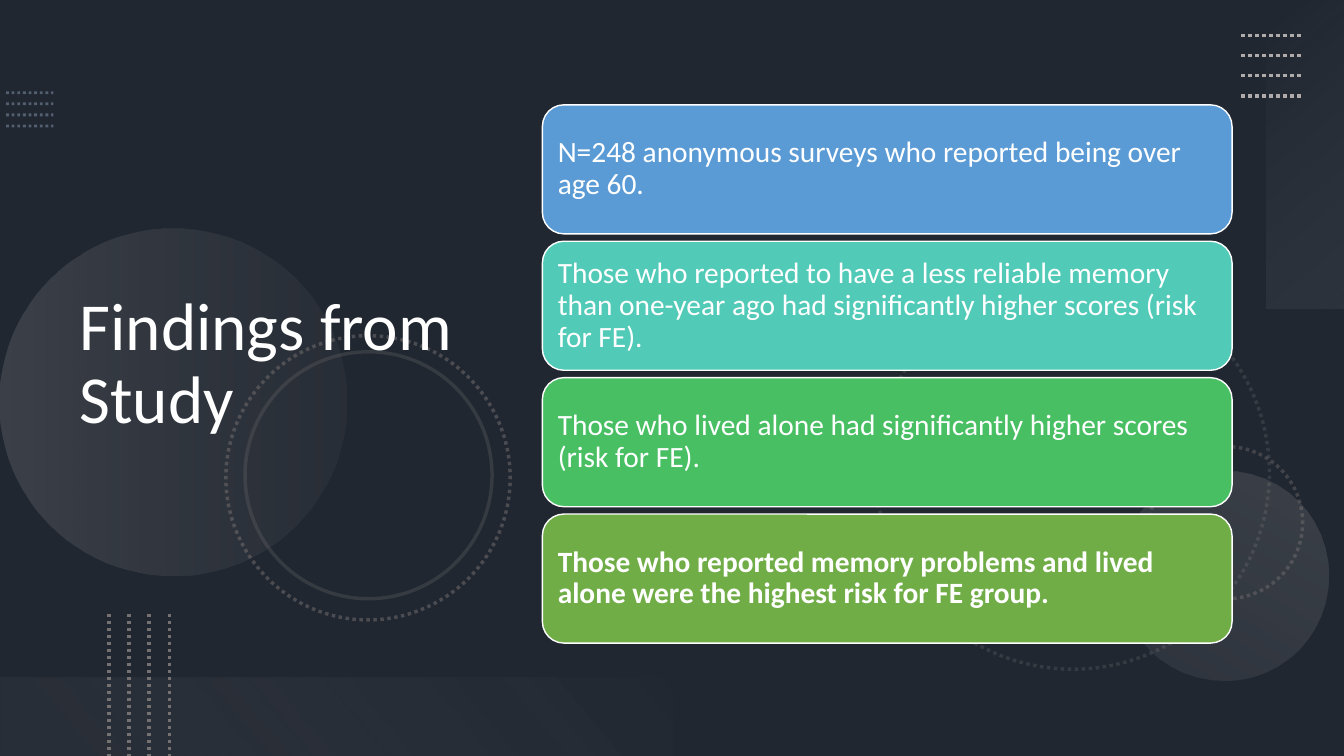
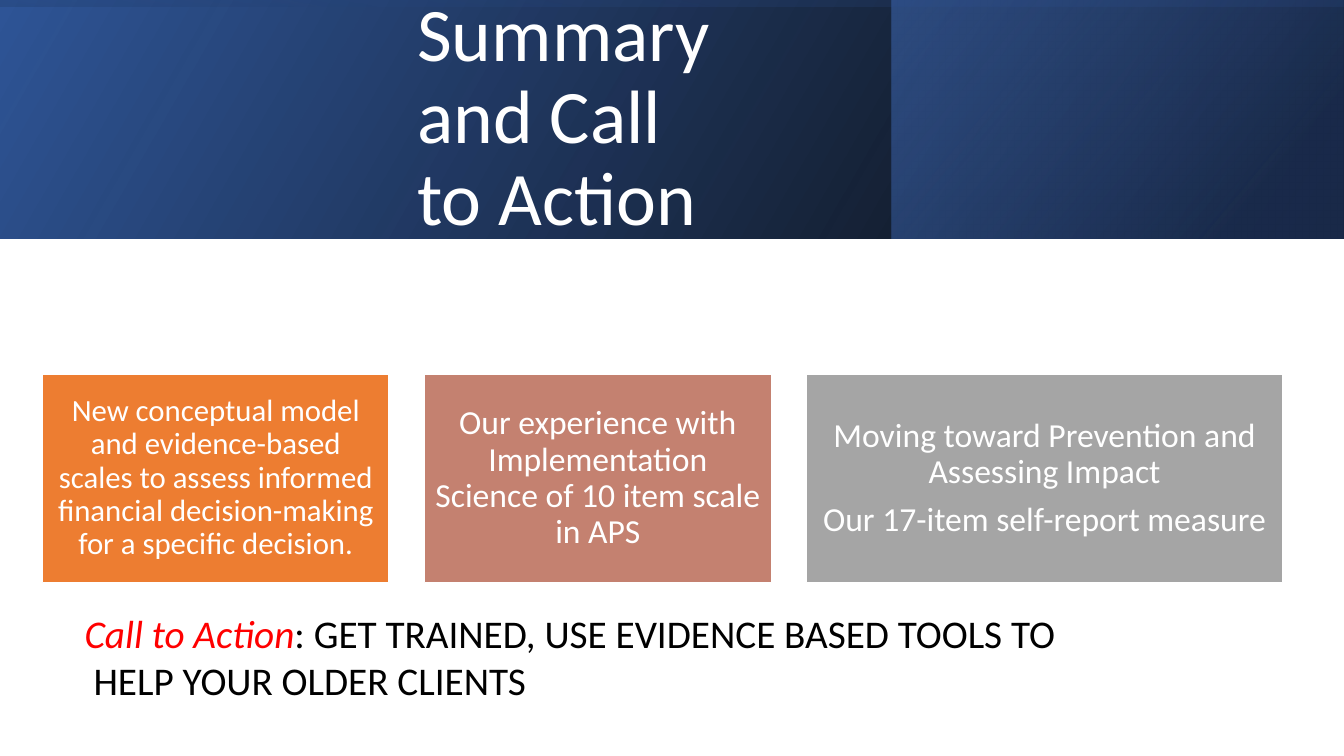
from pptx import Presentation
from pptx.dml.color import RGBColor
from pptx.enum import dml, shapes, text
from pptx.oxml import ns, xmlchemy
from pptx.util import Inches, Pt

FONT = "Calibri"
WHITE = RGBColor(0xFF, 0xFF, 0xFF)
BLACK = RGBColor(0x00, 0x00, 0x00)
RED = RGBColor(0xFF, 0x00, 0x00)
SLATE = RGBColor(0x44, 0x54, 0x6A)
STEEL = RGBColor(0x84, 0x97, 0xB0)
GREY = RGBColor(0x76, 0x71, 0x71)
SILVER = RGBColor(0xAF, 0xAB, 0xAB)
MIST = RGBColor(0xF5, 0xF5, 0xF5)
PEARL = RGBColor(0xF1, 0xF0, 0xF0)
BLUE = RGBColor(0x5B, 0x9B, 0xD5)
TEAL = RGBColor(0x52, 0xCA, 0xB8)
EMERALD = RGBColor(0x49, 0xBF, 0x64)
GREEN = RGBColor(0x70, 0xAD, 0x47)
ORANGE = RGBColor(0xED, 0x7D, 0x31)
ROSE = RGBColor(0xC4, 0x81, 0x70)
ASH = RGBColor(0xA5, 0xA5, 0xA5)
ROYAL = RGBColor(0x2F, 0x55, 0x97)
NAVY = RGBColor(0x20, 0x38, 0x64)
AZURE = RGBColor(0x44, 0x72, 0xC4)

RECT = shapes.MSO_SHAPE.RECTANGLE
ROUNDED = shapes.MSO_SHAPE.ROUNDED_RECTANGLE
OVAL = shapes.MSO_SHAPE.OVAL
DOTS = dml.MSO_LINE.ROUND_DOT
WIDTH, HEIGHT = 13.33, 7.5


class Slides:
    """Holds the shared style and the current slide."""

    def __init__(self):
        self.deck = Presentation()
        self.deck.slide_width = Inches(WIDTH)
        self.deck.slide_height = Inches(HEIGHT)
        self.page = None

    def new_page(self, color):
        self.page = self.deck.slides.add_slide(self.deck.slide_layouts[6])
        self.page.background.fill.solid()
        self.page.background.fill.fore_color.rgb = color

    def set_alpha(self, color, percent):
        alpha = xmlchemy.OxmlElement("a:alpha")
        alpha.set("val", str(percent * 1000))
        color.append(alpha)

    def stroke(self, line, color, width, dash=None):
        line.color.rgb = color
        line.width = Pt(width)
        if dash:
            line.dash_style = dash

    def shape(self, kind, at, fill=None, alpha=100, turn=0, flip=False):
        shape = self.page.shapes.add_shape(kind, *map(Inches, at))
        shape.shadow.inherit = False
        shape.rotation = turn
        shape.line.fill.background()
        if flip:
            shape._element.spPr.find(ns.qn("a:xfrm")).set("flipH", "1")
        if fill is None:
            shape.fill.background()
        else:
            shape.fill.solid()
            shape.fill.fore_color.rgb = fill
            if alpha < 100:
                color = shape._element.xpath("./p:spPr/a:solidFill/a:srgbClr")[0]
                self.set_alpha(color, alpha)
        return shape

    def gradient(self, kind, at, angle, stops, turn=0, flip=False):
        """Stops are (position, colour, opacity); the angle runs clockwise."""
        shape = self.shape(kind, at, turn=turn, flip=flip)
        shape.fill.gradient()
        shape.fill.gradient_angle = 360 - angle
        stop_list = shape._element.xpath("./p:spPr/a:gradFill/a:gsLst")[0]
        for old in list(stop_list):
            stop_list.remove(old)
        for position, rgb, opacity in stops:
            stop = xmlchemy.OxmlElement("a:gs")
            stop.set("pos", str(position * 1000))
            color = xmlchemy.OxmlElement("a:srgbClr")
            color.set("val", str(rgb))
            self.set_alpha(color, opacity)
            stop.append(color)
            stop_list.append(stop)

    def ring(self, left, top, size, alpha, turn=75, dash=DOTS):
        ring = self.shape(OVAL, (left, top, size, size), turn=turn)
        self.stroke(ring.line, GREY, 2.5, dash)
        self.set_alpha(ring._element.xpath(".//a:ln//a:srgbClr")[0], alpha)

    def dotted_lines(self, start, end, step, color, width=2.5, alpha=100):
        """Draw four parallel dotted lines, each moved on by step."""
        for number in range(4):
            dx, dy = number * step[0], number * step[1]
            line = self.page.shapes.add_connector(
                shapes.MSO_CONNECTOR.STRAIGHT,
                Inches(start[0] + dx), Inches(start[1] + dy),
                Inches(end[0] + dx), Inches(end[1] + dy))
            self.stroke(line.line, color, width, DOTS)
            line._element.spPr.append(xmlchemy.OxmlElement("a:effectLst"))
            if alpha < 100:
                self.set_alpha(line._element.xpath(".//a:ln//a:srgbClr")[0], alpha)

    def span(self, para, words, size, color=WHITE, bold=False, italic=False):
        span = para.add_run()
        span.text = words
        span.font.name = FONT
        span.font.size = Pt(size)
        span.font.color.rgb = color
        span.font.bold = bold
        span.font.italic = italic

    def text_box(self, at):
        frame = self.page.shapes.add_textbox(*map(Inches, at)).text_frame
        frame.word_wrap = True
        return frame

    def title(self, at, words, size):
        frame = self.text_box(at)
        frame.vertical_anchor = text.MSO_ANCHOR.MIDDLE
        para = frame.paragraphs[0]
        para.line_spacing = 0.9
        self.span(para, words, size)

    def card(self, kind, at, fill, lines, size, align, inset=0.09, bold=False):
        card = self.shape(kind, at, fill)
        self.stroke(card.line, WHITE, 1)
        frame = card.text_frame
        frame.word_wrap = True
        frame.vertical_anchor = text.MSO_ANCHOR.MIDDLE
        frame.margin_left = frame.margin_right = Inches(inset)
        frame.margin_top = frame.margin_bottom = Inches(inset)
        for number, words in enumerate(lines):
            para = frame.add_paragraph() if number else frame.paragraphs[0]
            para.alignment = align
            para.line_spacing = 0.9
            if number:
                para.space_before = Pt(0.35 * size)
            self.span(para, words, size, bold=bold)


def findings(slides):
    slides.new_page(SLATE)
    slides.shape(RECT, (0, 0, WIDTH, HEIGHT), BLACK, alpha=53)

    # Circles and dotted ornaments
    slides.dotted_lines((0.06, 0.92), (0.53, 0.92), (0, 0.11), STEEL, 2, 50)
    slides.ring(8.69, 2.74, 3.9, 25)
    slides.ring(11.41, 4.43, 1.51, 40, turn=270)
    slides.gradient(OVAL, (0, 2.27, 3.44, 3.44), 90,
                    [(0, SILVER, 20), (100, GREY, 10)], turn=270)
    slides.gradient(OVAL, (11.1, 4.67, 2.08, 2.08), 90,
                    [(0, SILVER, 10), (100, SILVER, 20)], turn=210)
    slides.ring(2.24, 3.33, 2.82, 50)
    slides.ring(2.43, 3.49, 2.45, 25, dash=None)
    slides.gradient(RECT, (11.42, 1.14, 3.06, 0.78), 140,
                    [(0, MIST, 0), (100, SILVER, 10)], turn=270)
    slides.dotted_lines((12.31, 0.35), (12.91, 0.35), (0, 0.2), SILVER)
    slides.gradient(RECT, (0, 6.72, 6.67, 0.78), 140,
                    [(10, GREY, 10), (100, PEARL, 0)], turn=180)
    slides.dotted_lines((1.08, 6.09), (1.08, HEIGHT), (0.2, 0), GREY)

    # Title and stacked findings
    slides.title((0.69, 0.54, 4.59, 6.17), "Findings from Study", 48)
    cards = [
        (BLUE, "N=248 anonymous surveys who reported being over age 60."),
        (TEAL, "Those who reported to have a less reliable memory than one-year "
               "ago had significantly higher scores (risk for FE)."),
        (EMERALD, "Those who lived alone had significantly higher scores (risk for FE)."),
        (GREEN, "Those who reported memory problems and lived alone were the "
                "highest risk for FE group."),
    ]
    first, last = 1.04, 5.1
    pitch = (last - first) / (len(cards) - 1)
    for row, (color, words) in enumerate(cards):
        slides.card(ROUNDED, (5.38, first + row * pitch, 6.84, 1.28), color, [words],
                    21, text.PP_ALIGN.LEFT, bold=color == GREEN)


def summary(slides):
    slides.new_page(WHITE)

    # Layered header band
    band = 2.37
    slides.gradient(RECT, (0, 0, WIDTH, band), 330,
                    [(0, BLACK, 96), (100, ROYAL, 100)], flip=True)
    slides.gradient(RECT, (8.84, 0, 4.48, band), 320,
                    [(19, NAVY, 68), (100, AZURE, 48)], flip=True)
    offset = (WIDTH - band) / 2
    slides.gradient(RECT, (offset, -offset, band, WIDTH), 350,
                    [(23, ROYAL, 16), (99, BLACK, 45)], turn=270, flip=True)
    slides.title((4.04, 0.32, 3.25, 1.72), "Summary and Call to Action", 54)

    # Three topic cards
    cards = [
        (3.44, ORANGE, 22, 0.09,
         ["New conceptual model and evidence-based scales to assess informed "
          "financial decision-making for a specific decision."]),
        (3.44, ROSE, 24, 0.1,
         ["Our experience with Implementation Science of 10 item scale in APS"]),
        (4.72, ASH, 24, 0.1,
         ["Moving toward Prevention and Assessing Impact",
          "Our 17-item self-report measure"]),
    ]
    left, gap = 0.42, 0.35
    for width, color, size, inset, lines in cards:
        slides.card(RECT, (left, 3.71, width, 2.07), color, lines, size,
                    text.PP_ALIGN.CENTER, inset)
        left += width + gap

    # Call to action
    frame = slides.text_box((0.74, 6, 10, 1.04))
    para = frame.paragraphs[0]
    slides.span(para, "Call to Action", 28, RED, italic=True)
    slides.span(para, ": GET TRAINED, USE EVIDENCE BASED TOOLS TO", 28, BLACK)
    para = frame.add_paragraph()
    para._p.get_or_add_pPr().set("marL", str(Inches(0.09)))
    slides.span(para, "HELP YOUR OLDER CLIENTS", 28, BLACK)


def main():
    slides = Slides()
    findings(slides)
    summary(slides)
    slides.deck.save("out.pptx")


if __name__ == "__main__":
    main()
